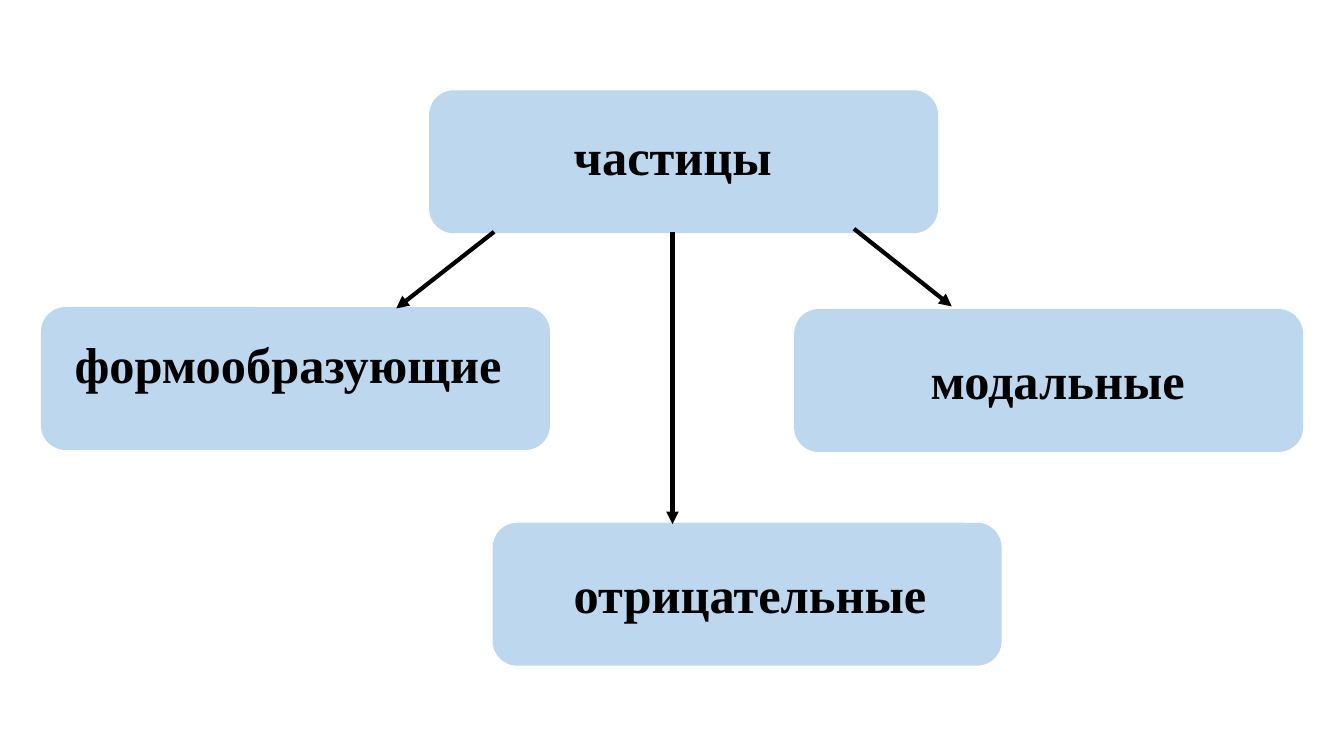
from lxml import etree
from pptx import Presentation
from pptx.dml.color import RGBColor
from pptx.enum.shapes import MSO_CONNECTOR, MSO_SHAPE
from pptx.enum.text import MSO_AUTO_SIZE
from pptx.oxml.ns import qn
from pptx.util import Inches, Pt

PALE_BLUE = RGBColor(0xBD, 0xD7, 0xEE)
BLACK = RGBColor(0, 0, 0)
FONT = "Times New Roman"
BOX_WIDTH, BOX_HEIGHT = 5.02, 1.39
LABEL_HEIGHT = 0.71

# Word, box (left, top), label (left, top, width)
PARTICLES = [
    ("частицы", (4.27, 0.91), (5.64, 1.19, 3.55)),
    ("формообразующие", (0.42, 3.06), (0.69, 3.26, 4.48)),
    ("отрицательные", (4.9, 5.2), (5.64, 5.54, 4.03)),
    ("модальные", (7.89, 3.08), (9.18, 3.41, 3.55)),
]

# Start and end of each arrow
ARROWS = [
    ((4.9, 2.3), (3.93, 3.06)),
    ((8.47, 2.27), (9.44, 3.04)),
    ((6.67, 2.3), (6.67, 5.2)),
]


def add_box(slide, left, top):
    box = slide.shapes.add_shape(
        MSO_SHAPE.ROUNDED_RECTANGLE,
        Inches(left), Inches(top), Inches(BOX_WIDTH), Inches(BOX_HEIGHT))
    box.shadow.inherit = False
    box.fill.solid()
    box.fill.fore_color.rgb = PALE_BLUE
    box.line.color.rgb = PALE_BLUE
    box.line.width = Pt(2)


def add_label(slide, word, left, top, width):
    label = slide.shapes.add_textbox(
        Inches(left), Inches(top), Inches(width), Inches(LABEL_HEIGHT))
    frame = label.text_frame
    frame.word_wrap = True
    frame.auto_size = MSO_AUTO_SIZE.SHAPE_TO_FIT_TEXT
    frame.margin_left = frame.margin_right = Inches(0.05)
    frame.margin_top = frame.margin_bottom = Inches(0.05)
    run = frame.paragraphs[0].add_run()
    run.text = word
    run.font.name = FONT
    run.font.size = Pt(36)
    run.font.bold = True
    run.font.color.rgb = BLACK


def add_arrow(slide, start, end):
    arrow = slide.shapes.add_connector(
        MSO_CONNECTOR.STRAIGHT, *(Inches(value) for value in start + end))
    arrow.line.color.rgb = BLACK
    arrow.line.width = Pt(3)
    properties = arrow.line._get_or_add_ln()
    etree.SubElement(properties, qn("a:tailEnd"), type="triangle")
    etree.SubElement(properties.getparent(), qn("a:effectLst"))


def main():
    presentation = Presentation()
    presentation.slide_width = Inches(13.33)
    presentation.slide_height = Inches(7.5)
    slide = presentation.slides.add_slide(presentation.slide_layouts[6])

    # Particle classes
    for word, box_place, label_place in PARTICLES:
        add_box(slide, *box_place)
        add_label(slide, word, *label_place)

    # Arrows from the root to each class
    for start, end in ARROWS:
        add_arrow(slide, start, end)

    presentation.save("out.pptx")


if __name__ == "__main__":
    main()
